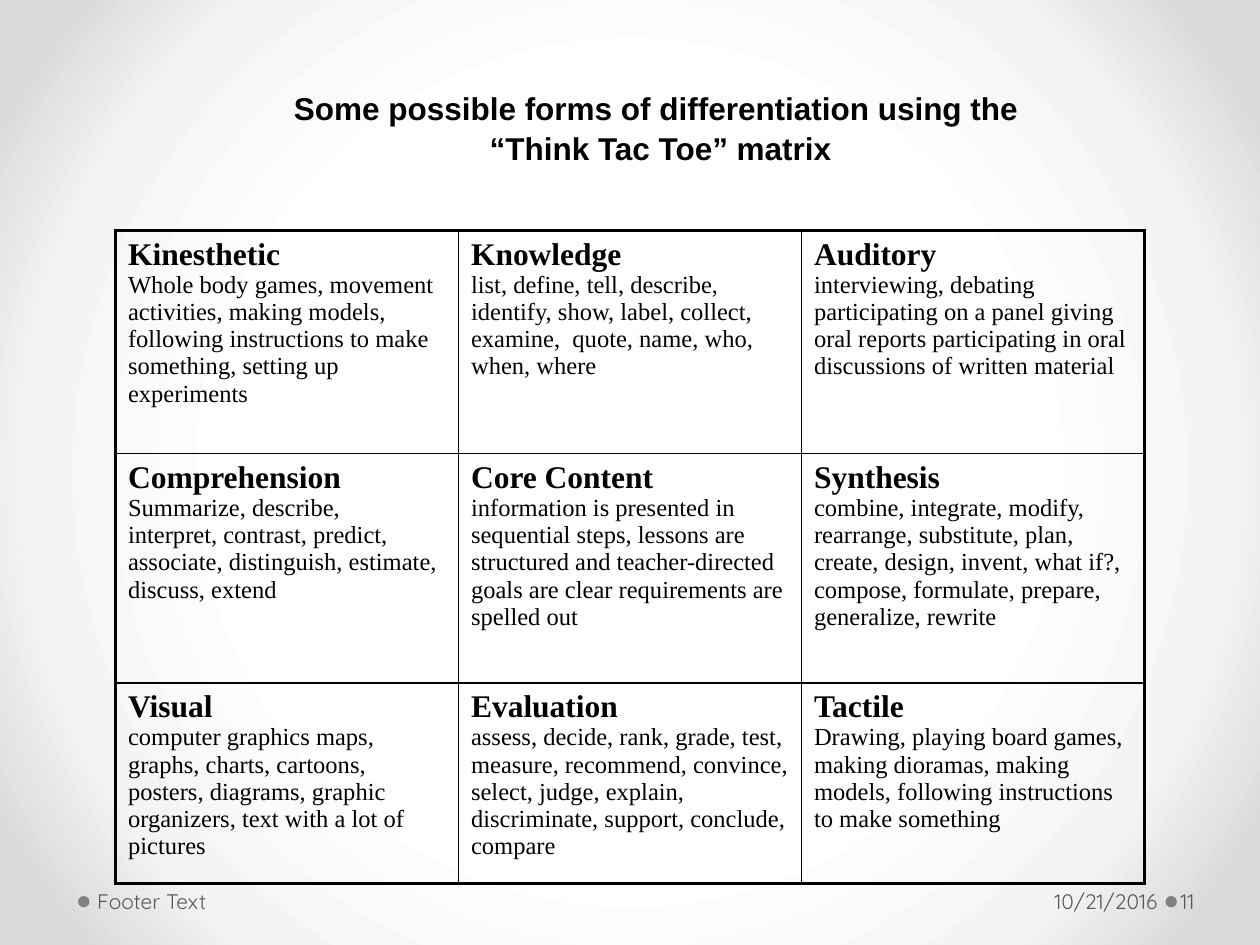
import pptx
import pptx.dml.color
import pptx.enum.shapes
import pptx.enum.text
import pptx.oxml
import pptx.oxml.ns
import pptx.util

Pt = pptx.util.Pt
Align = pptx.enum.text.PP_ALIGN
NS = pptx.oxml.ns.nsdecls("a", "p")


def color(code):
    return pptx.dml.color.RGBColor.from_string(code)


class Deck:
    ink, gray, dot_fill = "000000", "595959", "808080"
    sans, serif, small = "Arial", "Times New Roman", "Quicksand"
    thin, thick = 1, 2

    def __init__(self):
        self.file = pptx.Presentation()
        self.file.slide_width, self.file.slide_height = Pt(720), Pt(540)
        self.slide = self.file.slides.add_slide(self.file.slide_layouts[5])
        self.shapes = self.slide.shapes

    def place(self, shape, left, top, width, height):
        shape.left, shape.top = Pt(left), Pt(top)
        shape.width, shape.height = Pt(width), Pt(height)

    def frame(self, frame, left, top, right, bottom):
        frame.word_wrap = True
        frame.auto_size = pptx.enum.text.MSO_AUTO_SIZE.NONE
        frame.vertical_anchor = pptx.enum.text.MSO_ANCHOR.MIDDLE
        frame.margin_left, frame.margin_top = Pt(left), Pt(top)
        frame.margin_right, frame.margin_bottom = Pt(right), Pt(bottom)

    def run(self, para, text, font, size, code, bold=False):
        run = para.add_run()
        run.text = text
        run.font.name, run.font.size, run.font.bold = font, Pt(size), bold
        run.font.color.rgb = color(code)

    def paras(self, frame, count):
        while len(frame.paragraphs) < count:
            frame.add_paragraph()
        return frame.paragraphs

    def backdrop(self, stops):
        marks = "".join(
            f'<a:gs pos="{pos * 1000}"><a:srgbClr val="{code}"/></a:gs>'
            for pos, code in stops)
        side = 'l="50000" t="50000" r="50000" b="50000"'
        back = pptx.oxml.parse_xml(
            f'<p:bg {NS}><p:bgPr><a:gradFill rotWithShape="1">'
            f'<a:gsLst>{marks}</a:gsLst><a:path path="circle">'
            f'<a:fillToRect {side}/></a:path></a:gradFill>'
            '<a:effectLst/></p:bgPr></p:bg>')
        self.slide.element.cSld.insert(0, back)

    def title(self, lines, *box):
        shape = self.shapes.title
        self.place(shape, *box)
        self.frame(shape.text_frame, 0, 12, 0, 3)
        for para, line in zip(self.paras(shape.text_frame, len(lines)), lines):
            para.alignment = Align.CENTER
            para.space_before = Pt(1)
            props = para._p.get_or_add_pPr()
            props.set("marL", "0")
            props.set("indent", str(Pt(36)))
            self.run(para, line, self.sans, 18, self.ink, True)

    def dot(self, left, top, size):
        oval = pptx.enum.shapes.MSO_SHAPE.OVAL
        shape = self.shapes.add_shape(oval, Pt(left), Pt(top), Pt(size), Pt(size))
        shape.shadow.inherit = False
        shape.fill.solid()
        shape.fill.fore_color.rgb = color(self.dot_fill)
        shape.line.fill.background()

    def note(self, text, left, width, pads, align=Align.LEFT):
        shape = self.shapes.add_textbox(Pt(left), Pt(500.4), Pt(width), Pt(28.8))
        self.frame(shape.text_frame, pads[0], 3.6, pads[1], 3.6)
        para = shape.text_frame.paragraphs[0]
        para.alignment = align
        self.run(para, text, self.small, 12, self.gray)

    def edges(self, cell, widths):
        cell.fill.background()
        props = cell._tc.get_or_add_tcPr()
        for spot, (side, width) in enumerate(zip("LRTB", widths)):
            props.insert(spot, pptx.oxml.parse_xml(
                f'<a:ln{side} {NS} w="{Pt(width)}"><a:solidFill>'
                f'<a:srgbClr val="{self.ink}"/></a:solidFill></a:ln{side}>'))

    def grid(self, rows, left, top, width, heights):
        count = len(rows[0])
        table = self.shapes.add_table(len(rows), count, Pt(left), Pt(top),
                                      Pt(width), Pt(sum(heights))).table
        table.first_row = table.horz_banding = False
        for col in table.columns:
            col.width = Pt(width / count)
        for r, row in enumerate(rows):
            table.rows[r].height = Pt(heights[r])
            for c, (head, *body) in enumerate(row):
                cell = table.cell(r, c)
                first, *rest = self.paras(cell.text_frame, len(body) + 1)
                self.run(first, head, self.serif, 18, self.ink, True)
                for para, text in zip(rest, body):
                    self.run(para, text, self.serif, 14, self.ink)
                # Thick frame outside, thin rules inside
                outer = (c == 0, c == count - 1, r == 0, r == len(rows) - 1)
                self.edges(cell, [self.thick if o else self.thin for o in outer])


FORMS = [
    [("Kinesthetic", "Whole body games, movement activities, making models, "
      "following instructions to make something, setting up experiments"),
     ("Knowledge", "list, define, tell, describe, identify, show, label, "
      "collect, examine,  quote, name, who, when, where"),
     ("Auditory", "interviewing, debating participating on a panel giving oral "
      "reports participating in oral discussions of written material")],
    [("Comprehension", "Summarize, describe,", "interpret, contrast, predict, "
      "associate, distinguish, estimate, discuss, extend"),
     ("Core Content", "information is presented in sequential steps, lessons "
      "are structured and teacher-directed goals are clear requirements are "
      "spelled out"),
     ("Synthesis", "combine, integrate, modify, rearrange, substitute, plan, "
      "create, design, invent, what if?, compose, formulate, prepare, "
      "generalize, rewrite")],
    [("Visual", "computer graphics maps, graphs, charts, cartoons, posters, "
      "diagrams, graphic organizers, text with a lot of pictures"),
     ("Evaluation", "assess, decide, rank, grade, test, measure, recommend, "
      "convince, select, judge, explain, discriminate, support, conclude, "
      "compare"),
     ("Tactile", "Drawing, playing board games, making dioramas, making "
      "models, following instructions to make something")],
]


def main():
    deck = Deck()
    deck.backdrop([(50, "FFFFFF"), (76, "F4F4F4"), (92, "DADADA")])

    # Footer
    for left in (44.6, 666):
        deck.dot(left, 512, 6.5)
    deck.note("10/21/2016", 501, 164, (7.2, 3.6), Align.RIGHT)
    deck.note("Footer Text", 52, 224, (3.6, 7.2))
    deck.note("11", 672.5, 44, (2, 3.6))

    # Matrix
    deck.grid(FORMS, 66, 131.8, 588, (127.5, 131, 114.5))

    # Title
    deck.title(["Some possible forms of differentiation using the ",
                "“Think Tac Toe” matrix"], 66, 39, 587, 59)

    deck.file.save("out.pptx")


if __name__ == "__main__":
    main()
